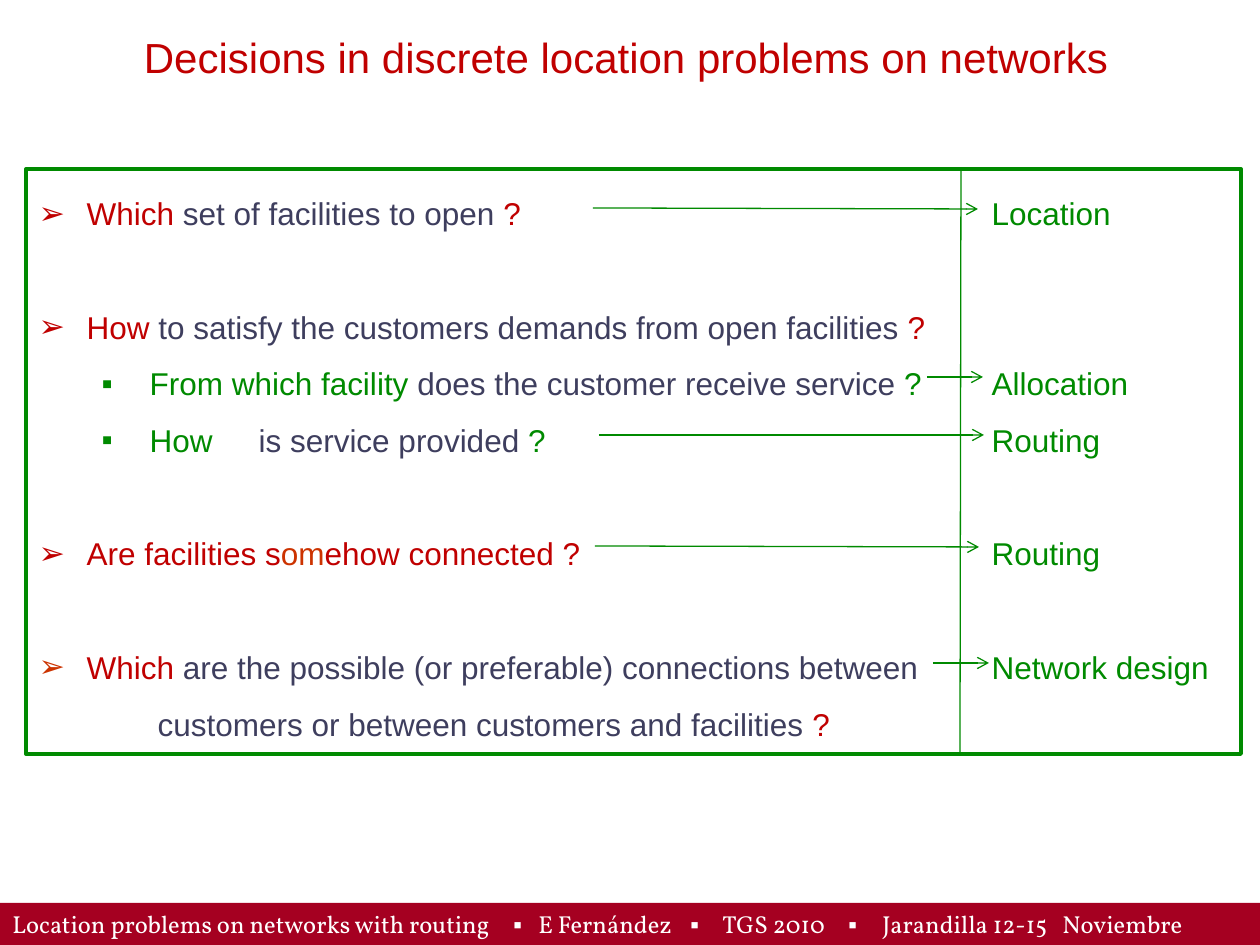
from lxml import etree
from pptx import Presentation
from pptx.dml.color import RGBColor
from pptx.enum.shapes import MSO_CONNECTOR, MSO_SHAPE
from pptx.enum.text import MSO_ANCHOR, MSO_AUTO_SIZE, PP_ALIGN
from pptx.oxml.ns import qn
from pptx.util import Pt

TOP, MIDDLE = MSO_ANCHOR.TOP, MSO_ANCHOR.MIDDLE
NO_FIT = MSO_AUTO_SIZE.NONE
CENTER, LEFT = PP_ALIGN.CENTER, PP_ALIGN.LEFT
STRAIGHT, RECTANGLE = MSO_CONNECTOR.STRAIGHT, MSO_SHAPE.RECTANGLE

RED = RGBColor(0xC0, 0x00, 0x00)
ORANGE = RGBColor(0xCC, 0x33, 0x00)
GREEN = RGBColor(0x00, 0x8A, 0x00)
SLATE = RGBColor(0x3E, 0x3E, 0x5E)
CRIMSON = RGBColor(0xA5, 0x00, 0x21)
WHITE = RGBColor(0xFF, 0xFF, 0xFF)

PX = 914400 // 126
LINE_PITCH = 1.8

TITLE = "Decisions in discrete location problems on networks"
TITLE_BOX = (120, 0, 1012, 88)
DECISIONS_BOX = (26, 169, 1215, 585)
FOOTER_BOX = (0, 903, 1260, 42)

LEVELS = {
    "question": (48, -48, "➢"),
    "detail": (111, -48, "▪"),
    "continuation": (119, 0, None),
}
DECISION_TABS = (63, 111, 220, 953)

DECISIONS = [
    ("question", RED, False, [
        ("Which ", RED), ("set of facilities to open ", SLATE),
        ("? \t", RED), ("Location", GREEN)]),
    ("question", RED, True, [
        ("How ", RED),
        ("to satisfy the customers demands from open facilities ", SLATE),
        ("?", RED)]),
    ("detail", GREEN, False, [
        ("From which facility ", GREEN),
        ("does the customer receive service ", SLATE),
        ("? \tAllocation", GREEN)]),
    ("detail", GREEN, False, [
        ("How \t", GREEN), ("is service provided ", SLATE),
        ("? \tRouting", GREEN)]),
    ("question", RED, True, [
        ("Are facilities s", RED), ("om", ORANGE),
        ("ehow connected ? \t", RED), ("Routing", GREEN)]),
    ("question", ORANGE, True, [
        ("Which ", RED),
        ("are the possible (or preferable) connections between \t", SLATE),
        ("Network design", GREEN)]),
    ("continuation", None, False, [
        ("customers or between customers and facilities ", SLATE),
        ("?", RED)]),
]

DIVIDER = (961, 170, 960, 755)
ARROWS = [
    (593, 208, 978, 209),
    (927, 377, 983, 377),
    (599, 435, 984, 435),
    (595, 546, 979, 547),
    (933, 663, 989, 663),
]

FOOTER = [
    ("Location problems on networks with routing\t", "Vollkorn"),
    ("▪", "Calibri"), ("\tE Fernández\t", "Vollkorn"),
    ("▪", "Calibri"), ("\tTGS 2010\t", "Vollkorn"),
    ("▪", "Calibri"), ("\tJarandilla 12-15\tNoviembre", "Vollkorn"),
]
FOOTER_TABS = (501, 526, 678, 710, 836, 870, 1050)


def px(*lengths):
    return [length * PX for length in lengths]


def place(shape, box):
    shape.left, shape.top, shape.width, shape.height = px(*box)


def set_frame(frame, anchor):
    frame.word_wrap = True
    frame.auto_size = NO_FIT
    frame.vertical_anchor = anchor


def set_indent(paragraph, margin, indent):
    properties = paragraph._p.get_or_add_pPr()
    properties.set("marL", str(margin * PX))
    properties.set("indent", str(indent * PX))


def add_bullet(paragraph, symbol, color):
    properties = paragraph._p.get_or_add_pPr()
    if symbol is None:
        etree.SubElement(properties, qn("a:buNone"))
        return
    bullet_color = etree.SubElement(properties, qn("a:buClr"))
    etree.SubElement(bullet_color, qn("a:srgbClr"), val=str(color))
    etree.SubElement(properties, qn("a:buFont"), typeface="Arial")
    etree.SubElement(properties, qn("a:buChar"), char=symbol)


def add_tabs(paragraph, stops):
    tabs = etree.SubElement(paragraph._p.get_or_add_pPr(), qn("a:tabLst"))
    for stop in stops:
        etree.SubElement(tabs, qn("a:tab"), pos=str(stop * PX), algn="l")


def set_text_style(paragraph, size, alignment):
    paragraph.alignment = alignment
    paragraph.line_spacing = Pt(size * LINE_PITCH)
    paragraph.font.size = Pt(size)
    paragraph.font.name = "Arial"


def add_line(shapes, ends, arrow=False):
    line = shapes.add_connector(STRAIGHT, *px(*ends))
    line.line.color.rgb = GREEN
    line.line.width = Pt(0.75)
    if arrow:
        etree.SubElement(line.line._get_or_add_ln(), qn("a:tailEnd"), type="arrow")
    etree.SubElement(line._element.spPr, qn("a:effectLst"))


def add_title(title):
    place(title, TITLE_BOX)
    set_frame(title.text_frame, TOP)
    title.text_frame.text = TITLE
    paragraph = title.text_frame.paragraphs[0]
    set_text_style(paragraph, 24, CENTER)
    paragraph.font.color.rgb = RED


def add_decisions(body):
    place(body, DECISIONS_BOX)
    body.line.color.rgb = GREEN
    body.line.width = Pt(2.25)
    frame = body.text_frame
    set_frame(frame, TOP)
    for index, (level, bullet_color, new_group, parts) in enumerate(DECISIONS):
        paragraph = frame.add_paragraph() if index else frame.paragraphs[0]
        margin, indent, symbol = LEVELS[level]
        set_indent(paragraph, margin, indent)
        add_bullet(paragraph, symbol, bullet_color)
        add_tabs(paragraph, DECISION_TABS)
        set_text_style(paragraph, 18, LEFT)
        paragraph.space_before = Pt(18 * LINE_PITCH if new_group else 0)
        for text, color in parts:
            run = paragraph.add_run()
            run.text = text
            run.font.color.rgb = color


def add_footer(shapes):
    footer = shapes.add_shape(RECTANGLE, *px(*FOOTER_BOX))
    footer.shadow.inherit = False
    footer.fill.solid()
    footer.fill.fore_color.rgb = CRIMSON
    footer.line.fill.background()
    set_frame(footer.text_frame, MIDDLE)
    paragraph = footer.text_frame.paragraphs[0]
    paragraph.alignment = LEFT
    add_tabs(paragraph, FOOTER_TABS)
    paragraph.font.size = Pt(14)
    paragraph.font.color.rgb = WHITE
    for text, typeface in FOOTER:
        run = paragraph.add_run()
        run.text = text
        run.font.name = typeface


def main():
    deck = Presentation()
    deck.slide_width, deck.slide_height = px(1260, 945)
    slide = deck.slides.add_slide(deck.slide_layouts[1])
    add_title(slide.shapes.title)
    add_decisions(slide.placeholders[1])
    add_footer(slide.shapes)
    add_line(slide.shapes, DIVIDER)
    for ends in ARROWS:
        add_line(slide.shapes, ends, arrow=True)
    deck.save("out.pptx")


if __name__ == "__main__":
    main()
